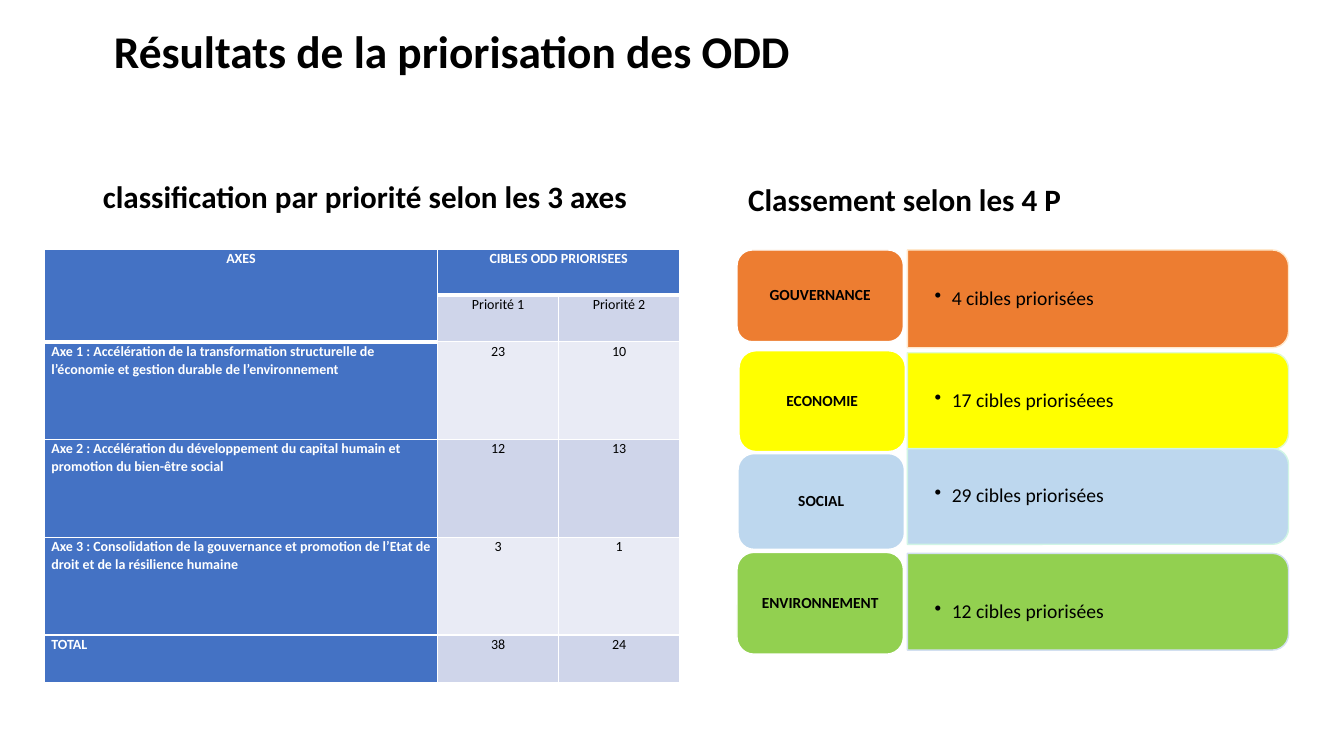
from lxml.etree import SubElement
from pptx import Presentation
from pptx.dml.color import RGBColor
from pptx.enum.shapes import MSO_SHAPE as Shape
from pptx.enum.text import MSO_ANCHOR as Anchor, MSO_AUTO_SIZE as AutoSize, PP_ALIGN as Align
from pptx.oxml.ns import qn
from pptx.util import Inches, Pt

COLORS = {
    "black": "000000", "white": "FFFFFF", "blue": "4472C4",
    "band": "CFD5EA", "pale": "E9EBF5",
    "orange": "ED7D31", "yellow": "FFFF00", "sky": "BDD7EE", "green": "92D050",
    "orange edge": "FFE8CC", "yellow edge": "E1FACE",
    "sky edge": "D0F5E5", "green edge": "D2DFF0",
}


def write(frame, text, size, bold=False, color="black", align=Align.LEFT, spacing=0.9):
    frame.word_wrap = True
    frame.text = text
    para = frame.paragraphs[0]
    para.alignment = align
    para.line_spacing = spacing
    para.font.name = "Calibri"
    para.font.size = Pt(size)
    para.font.bold = bold
    para.font.color.rgb = RGBColor.from_string(COLORS[color])
    return para


def paint(shape, fill, edge):
    shape.shadow.inherit = False
    shape.fill.solid()
    shape.fill.fore_color.rgb = RGBColor.from_string(COLORS[fill])
    shape.line.color.rgb = RGBColor.from_string(COLORS[edge])
    shape.line.width = Pt(1)


deck = Presentation()
deck.slide_width, deck.slide_height = Inches(13.33), Inches(7.5)
page = deck.slides.add_slide(deck.slide_layouts[4])
holders = {holder.placeholder_format.idx: holder for holder in page.placeholders}
for unused in (2, 4):
    element = holders[unused].element
    element.getparent().remove(element)

headings = [
    (0, "Résultats de la priorisation des ODD", 32.4, (1.03, 0.3, 11.5), Anchor.MIDDLE),
    (1, "classification par priorité selon les 3 axes", 22.2, (0.92, 1.72, 5.64), Anchor.BOTTOM),
    (3, "Classement selon les 4 P", 22.2, (7.32, 1.74, 5.67), Anchor.BOTTOM),
]
for index, text, size, (left, top, width), anchor in headings:
    holder = holders[index]
    holder.left, holder.top = Inches(left), Inches(top)
    holder.width, holder.height = Inches(width), Inches(0.47)
    write(holder.text_frame, text, size, bold=True)
    holder.text_frame.auto_size = AutoSize.NONE
    holder.text_frame.vertical_anchor = anchor

axes = [
    ("AXES", "CIBLES ODD PRIORISEES", ""),
    ("", "Priorité 1", "Priorité 2"),
    ("Axe 1 : Accélération de la transformation structurelle de l’économie "
     "et gestion durable de l’environnement", "23", "10"),
    ("Axe 2 : Accélération du développement du capital humain "
     "et promotion du bien-être social", "12", "13"),
    ("Axe 3 : Consolidation de la gouvernance et promotion de l’Etat de droit "
     "et de la résilience humaine", "3", "1"),
    ("TOTAL", "38", "24"),
]
widths = [3.9, 1.2, 1.2]
heights = [0.46, 0.46, 0.97, 0.97, 0.97, 0.47]
table = page.shapes.add_table(len(axes), len(widths), Inches(0.44), Inches(2.47),
                              Inches(sum(widths)), Inches(sum(heights))).table
table.horz_banding = False
for column, width in zip(table.columns, widths):
    column.width = Inches(width)
for row, height in zip(table.rows, heights):
    row.height = Inches(height)
table.cell(0, 0).merge(table.cell(1, 0))
table.cell(0, 1).merge(table.cell(0, 2))

for r, values in enumerate(axes):
    for c, value in enumerate(values):
        cell = table.cell(r, c)
        header = r == 0 or c == 0
        cell.margin_left = cell.margin_right = Inches(0.07)
        cell.margin_top = cell.margin_bottom = 0
        if not cell.is_spanned:
            para = write(cell.text_frame, value, 10, header, "white" if header else "black",
                         Align.CENTER if r == 0 or c > 0 else Align.LEFT, 1.07)
            para.space_after = Pt(8)
        properties = cell._tc.get_or_add_tcPr()
        for side in ("lnL", "lnR", "lnT", "lnB"):
            thick = side == "lnB" and (r == 0 or (r, c) == (1, 0))
            line = SubElement(properties, qn("a:" + side), w=str(Pt(3 if thick else 1)))
            fill = SubElement(line, qn("a:solidFill"))
            SubElement(fill, qn("a:srgbClr"), val=COLORS["white"])
        cell.fill.solid()
        shade = "blue" if header else "band" if r % 2 else "pale"
        if r == len(axes) - 1 and not header:
            shade = "band"
        cell.fill.fore_color.rgb = RGBColor.from_string(COLORS[shade])

pillars = [
    ("GOUVERNANCE", "4 cibles priorisées", "orange", (7.31, 2.48, 0.91), (2.48, 0.97), 0.14),
    ("ECONOMIE", "17 cibles prioriséees", "yellow", (7.33, 3.48, 1), (3.5, 0.96), 0.14),
    ("SOCIAL", "29 cibles priorisées", "sky", (7.32, 4.5, 0.95), (4.45, 0.95), 0.14),
    ("ENVIRONNEMENT", "12 cibles priorisées", "green", (7.31, 5.48, 1.01), (5.49, 0.96), 0.34),
]
bar_left, bar_length = 9, 3.78
for name, count, color, (left, top, height), (bar_top, bar_height), inset in pillars:
    bar = page.shapes.add_shape(
        Shape.ROUND_2_SAME_RECTANGLE,
        Inches(bar_left + (bar_length - bar_height) / 2),
        Inches(bar_top - (bar_length - bar_height) / 2),
        Inches(bar_height), Inches(bar_length))
    bar.rotation = 90
    paint(bar, color, color + " edge")

    box = page.shapes.add_textbox(Inches(bar_left), Inches(bar_top + 0.05),
                                  Inches(3.73), Inches(bar_height - 0.1))
    frame = box.text_frame
    frame.vertical_anchor = Anchor.MIDDLE
    frame.margin_left = frame.margin_right = Inches(0.27)
    frame.margin_top, frame.margin_bottom = Inches(inset), Inches(0.14)
    para = write(frame, count, 14)
    bullet = para._p.get_or_add_pPr()
    bullet.set("marL", str(Inches(0.17)))
    bullet.set("indent", str(-Inches(0.17)))
    mark = SubElement(bullet, qn("a:buChar"), char="•")
    bullet.find(qn("a:defRPr")).addprevious(mark)

    label = page.shapes.add_shape(Shape.ROUNDED_RECTANGLE, Inches(left), Inches(top),
                                  Inches(1.65), Inches(height))
    paint(label, color, "white")
    frame = label.text_frame
    frame.vertical_anchor = Anchor.MIDDLE
    frame.margin_left = frame.margin_right = Inches(0.05)
    frame.margin_top = frame.margin_bottom = Inches(0.02)
    write(frame, name, 11, bold=True, align=Align.CENTER)

deck.save("out.pptx")
